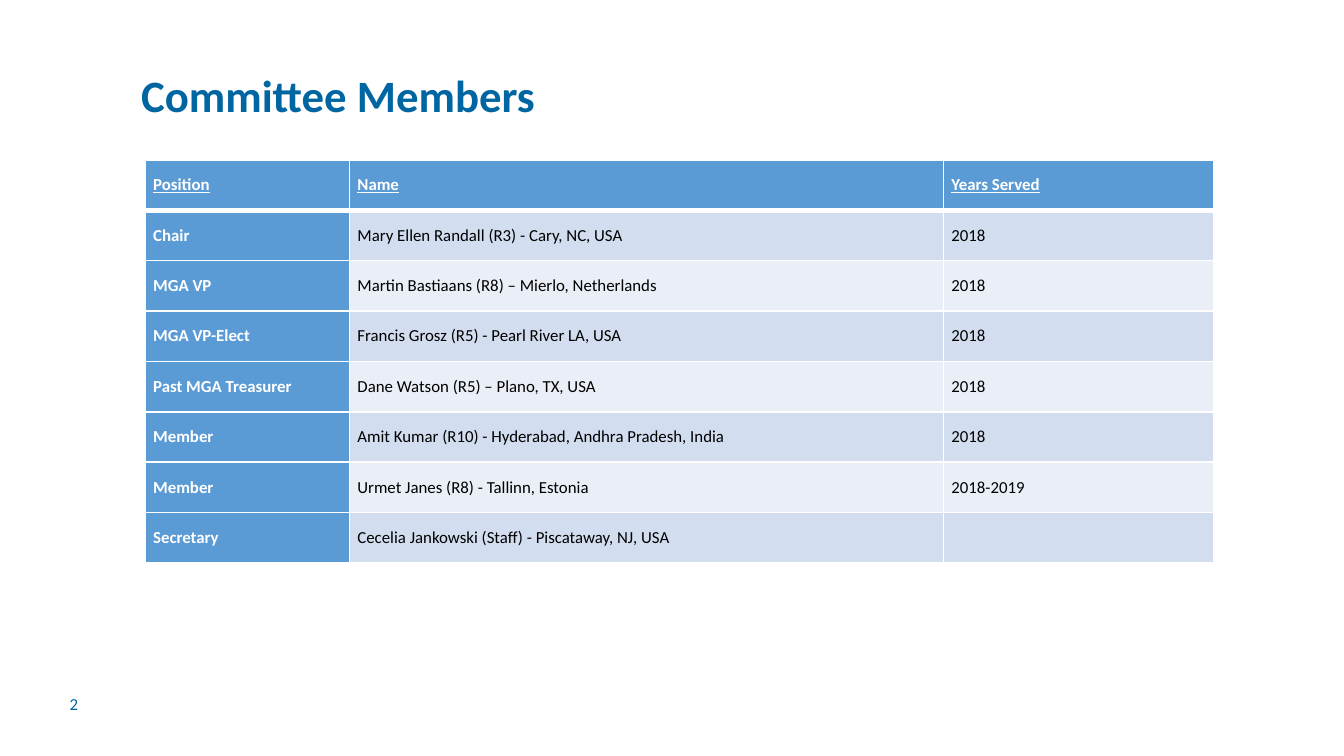
from lxml import etree
from pptx import Presentation
from pptx import util as u
from pptx.dml import color
from pptx.enum import text
from pptx.oxml import ns

BLUE, WHITE, BLACK = "5B9BD5", "FFFFFF", "000000"
BANDS = ["EAEFF7", "D2DEEF"]
COLUMNS = [1.52, 4.42, 2.01]
ROW_HEIGHT = 0.375
MEMBERS = [
    ("Position", "Name", "Years Served"),
    ("Chair", "Mary Ellen Randall (R3) - Cary, NC, USA", "2018"),
    ("MGA VP", "Martin Bastiaans (R8) – Mierlo, Netherlands", "2018"),
    ("MGA VP-Elect", "Francis Grosz (R5) - Pearl River LA, USA", "2018"),
    ("Past MGA Treasurer", "Dane Watson (R5) – Plano, TX, USA", "2018"),
    ("Member", "Amit Kumar (R10) - Hyderabad, Andhra Pradesh, India", "2018"),
    ("Member", "Urmet Janes (R8) - Tallinn, Estonia", "2018-2019"),
    ("Secretary", "Cecelia Jankowski (Staff) - Piscataway, NJ, USA", ""),
]


def write(frame, words, size, hue, bold=False, underline=False):
    frame.text = words
    para = frame.paragraphs[0]
    para.alignment = text.PP_ALIGN.LEFT
    para.font.name = "Calibri"
    para.font.size = u.Pt(size)
    para.font.bold = bold
    para.font.underline = underline
    para.font.color.rgb = color.RGBColor.from_string(hue)


def add_borders(cell, bottom_width):
    properties = cell._tc.get_or_add_tcPr()
    widths = {"a:lnL": 1, "a:lnR": 1, "a:lnT": 1, "a:lnB": bottom_width}
    for position, (side, width) in enumerate(widths.items()):
        line = etree.Element(ns.qn(side), w=str(u.Pt(width)))
        fill = etree.SubElement(line, ns.qn("a:solidFill"))
        etree.SubElement(fill, ns.qn("a:srgbClr"), val=WHITE)
        properties.insert(position, line)


deck = Presentation()
deck.slide_width, deck.slide_height = u.Inches(10), u.Inches(5.625)
page = deck.slides.add_slide(deck.slide_layouts[5])

title = page.shapes.title
title.left, title.top = u.Inches(0.95), u.Inches(0.45)
title.width, title.height = u.Inches(8.08), u.Inches(0.5)
write(title.text_frame, "Committee Members", 24, "0066A1", bold=True)
title.text_frame.vertical_anchor = text.MSO_ANCHOR.TOP
title.text_frame.auto_size = text.MSO_AUTO_SIZE.SHAPE_TO_FIT_TEXT

table = page.shapes.add_table(
    len(MEMBERS), len(COLUMNS), u.Inches(1.08), u.Inches(1.19),
    u.Inches(sum(COLUMNS)), u.Inches(ROW_HEIGHT * len(MEMBERS))).table
for column, width in zip(table.columns, COLUMNS):
    column.width = u.Inches(width)

for r, member in enumerate(MEMBERS):
    for c, words in enumerate(member):
        cell = table.cell(r, c)
        header = r == 0
        accent = header or c == 0
        cell.margin_left = cell.margin_right = u.Inches(0.06)
        cell.margin_top = cell.margin_bottom = 0
        cell.vertical_anchor = text.MSO_ANCHOR.MIDDLE
        cell.fill.solid()
        cell.fill.fore_color.rgb = color.RGBColor.from_string(BLUE if accent else BANDS[r % 2])
        add_borders(cell, 3 if header else 1)
        write(cell.text_frame, words, 9, WHITE if accent else BLACK, accent, header)
        if r == 1:
            cell._tc.tcPr.find(ns.qn("a:lnT")).set("w", str(u.Pt(3)))

number = page.shapes.add_textbox(u.Inches(0.42), u.Inches(5.09), u.Inches(0.53), u.Inches(0.3))
number.text_frame.word_wrap = True
number.text_frame.vertical_anchor = text.MSO_ANCHOR.MIDDLE
write(number.text_frame, "2", 9, "0066A1")

deck.save("out.pptx")
